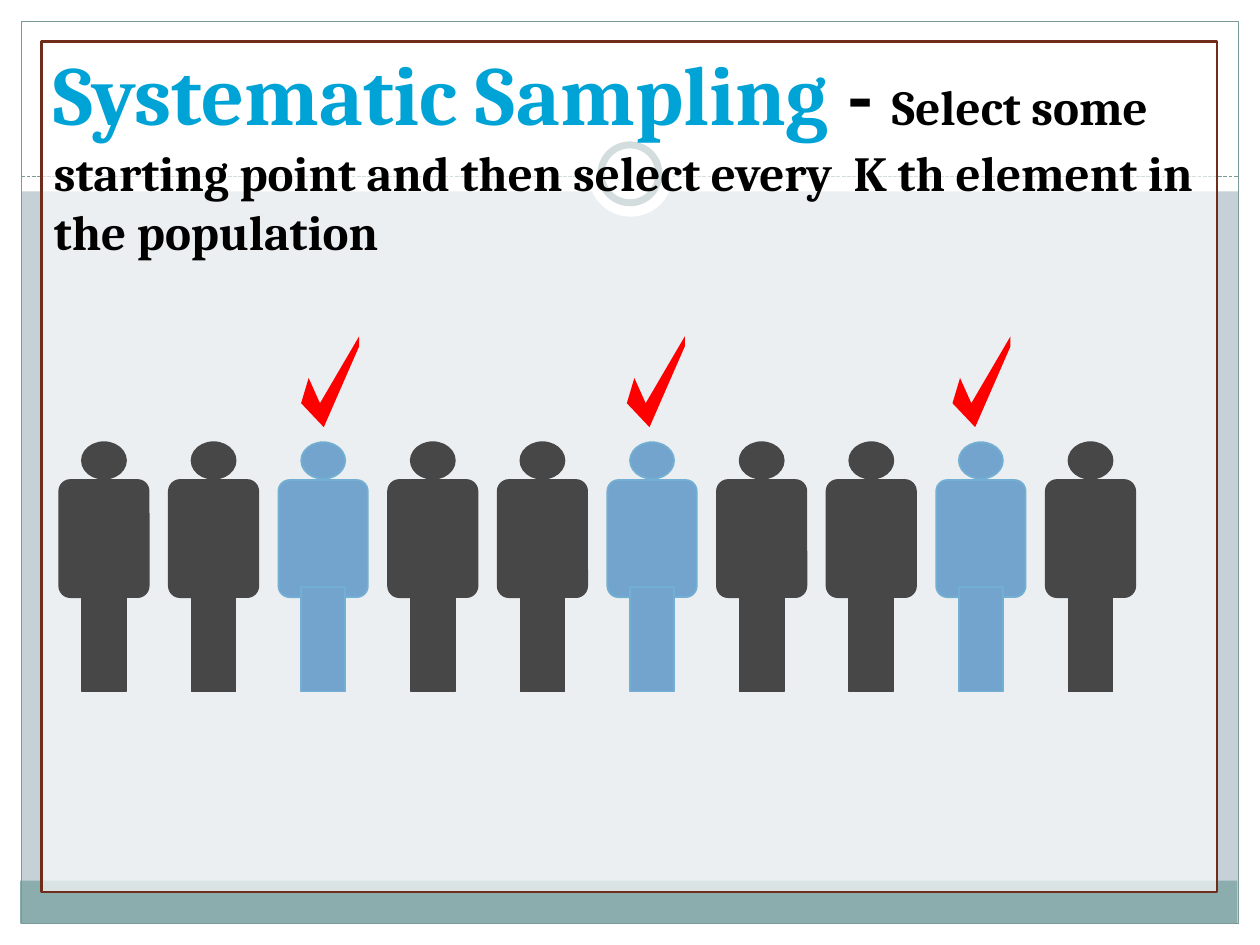
"""Build the systematic sampling slide."""
from lxml.etree import SubElement
from pptx import Presentation
from pptx.dml.color import RGBColor
from pptx.enum.dml import MSO_LINE as Dash
from pptx.enum.shapes import MSO_CONNECTOR as Conn, MSO_SHAPE as Kind
from pptx.enum.text import MSO_ANCHOR as Anchor
from pptx.oxml.ns import qn
from pptx.util import Inches, Pt

WHITE = RGBColor(0xFF, 0xFF, 0xFF)
BLACK = RGBColor(0, 0, 0)
MIST = RGBColor(0xC5, 0xD1, 0xD7)
TEAL = RGBColor(0x8C, 0xAD, 0xAE)
SLATE = RGBColor(0x7C, 0x99, 0x9A)
RUST = RGBColor(0x71, 0x2D, 0x1C)
DARK = RGBColor(0x47, 0x47, 0x47)
BLUE = RGBColor(0x73, 0xA4, 0xCD)
EDGE = RGBColor(0x73, 0xAF, 0xD2)
RED = RGBColor(0xFF, 0, 0)
CYAN = RGBColor(0, 0xA3, 0xD6)

TITLE = [
    ("Systematic Sampling ", 48, CYAN),
    ("- ", 48, BLACK),
    ("Select some starting point and then select every  K th element in the population", 28, BLACK),
]
DECOR = [
    (Kind.RECTANGLE, (0, 7.33, 10, 0.17), WHITE, None, 0),
    (Kind.RECTANGLE, (0, 0, 10, 1.52), WHITE, None, 0),
    (Kind.RECTANGLE, (0, 0, 0.17, 7.5), WHITE, None, 0),
    (Kind.RECTANGLE, (9.83, 0, 0.17, 7.5), WHITE, None, 0),
    (Kind.RECTANGLE, (0.16, 6.99, 9.66, 0.34), TEAL, None, 0),
    (Kind.RECTANGLE, (0.17, 0.17, 9.66, 7.16), None, SLATE, 0.75),
]
RING = [
    (Kind.OVAL, (4.67, 1.05, 0.67, 0.67), WHITE, None, 0),
    (Kind.OVAL, (4.77, 1.15, 0.46, 0.46), WHITE, SLATE, 4),
]
PANEL = (Kind.RECTANGLE, (0.33, 0.33, 9.33, 6.75), WHITE, RUST, 1.5)
BODY = [
    (Kind.ROUNDED_RECTANGLE, (0, 3.81, 0.71, 0.93)),
    (Kind.OVAL, (0.18, 3.51, 0.35, 0.29)),
    (Kind.RECTANGLE, (0.18, 4.66, 0.35, 0.83)),
]
COUNT, STEP, LEFT, PITCH = 10, 3, 0.47, 0.87
TICK = [(0.06, 0.33), (0, 0.53), (0.18, 0.72), (0.46, 0.08), (0.46, 0), (0.15, 0.53)]
TICKS, FIRST, GAP, TOP = 3, 2.39, 2.585, 2.67


def style(shape, fill, edge, width):
    shape.shadow.inherit = False
    for part, tone in ((shape.fill, fill), (shape.line.fill, edge)):
        if tone is None:
            part.background()
        else:
            part.solid()
            part.fore_color.rgb = tone
    if edge is not None:
        shape.line.width = Pt(width)


def draw(home, kind, box, fill, edge, width):
    shape = home.add_shape(kind, *map(Inches, box))
    style(shape, fill, edge, width)
    return shape


def person(home, spot):
    fill, edge = (BLUE, EDGE) if (spot + 1) % STEP == 0 else (DARK, DARK)
    group = home.add_group_shape().shapes
    for kind, (x, y, w, h) in BODY:
        box = (LEFT + spot * PITCH + x, y, w, h)
        shape = draw(group, kind, box, fill, edge, 1)
        if kind == Kind.ROUNDED_RECTANGLE:
            shape.adjustments[0] = 0.125


def tick(home, left):
    dots = [(Inches(left + x), Inches(TOP + y)) for x, y in TICK]
    path = home.build_freeform(*dots[0])
    path.add_line_segments(dots[1:], close=True)
    style(path.convert_to_shape(), RED, None, 0)


def title(home):
    frame = home.add_textbox(*map(Inches, (0.33, 0.28, 9.25, 1.83))).text_frame
    for name, value in {"word_wrap": True, "vertical_anchor": Anchor.TOP}.items():
        setattr(frame, name, value)
    for text, size, tone in TITLE:
        run = frame.paragraphs[0].add_run()
        run.text = text
        for name, value in {"name": "Cambria", "size": Pt(size), "bold": True}.items():
            setattr(run.font, name, value)
        run.font.color.rgb = tone


def main():
    deck = Presentation()
    deck.slide_width, deck.slide_height = Inches(10), Inches(7.5)
    slide = deck.slides.add_slide(deck.slide_layouts[6])
    back = slide.background.fill
    back.solid()
    back.fore_color.rgb = MIST
    home = slide.shapes
    for item in DECOR:
        draw(home, *item)
    rule = home.add_connector(Conn.STRAIGHT, *map(Inches, (0.17, 1.4, 9.83, 1.4)))
    rule.line.color.rgb = SLATE
    rule.line.width = Pt(0.75)
    rule.line.dash_style = Dash.SQUARE_DOT
    SubElement(rule._element.spPr, qn("a:effectLst"))
    for item in RING:
        draw(home, *item)
    panel = draw(home, *PANEL)
    tone = panel._element.spPr.find(qn("a:solidFill"))[0]
    SubElement(tone, qn("a:alpha")).set("val", "67000")
    for spot in range(COUNT):
        person(home, spot)
    for spot in range(TICKS):
        tick(home, FIRST + spot * GAP)
    title(home)
    deck.save("out.pptx")


if __name__ == "__main__":
    main()
